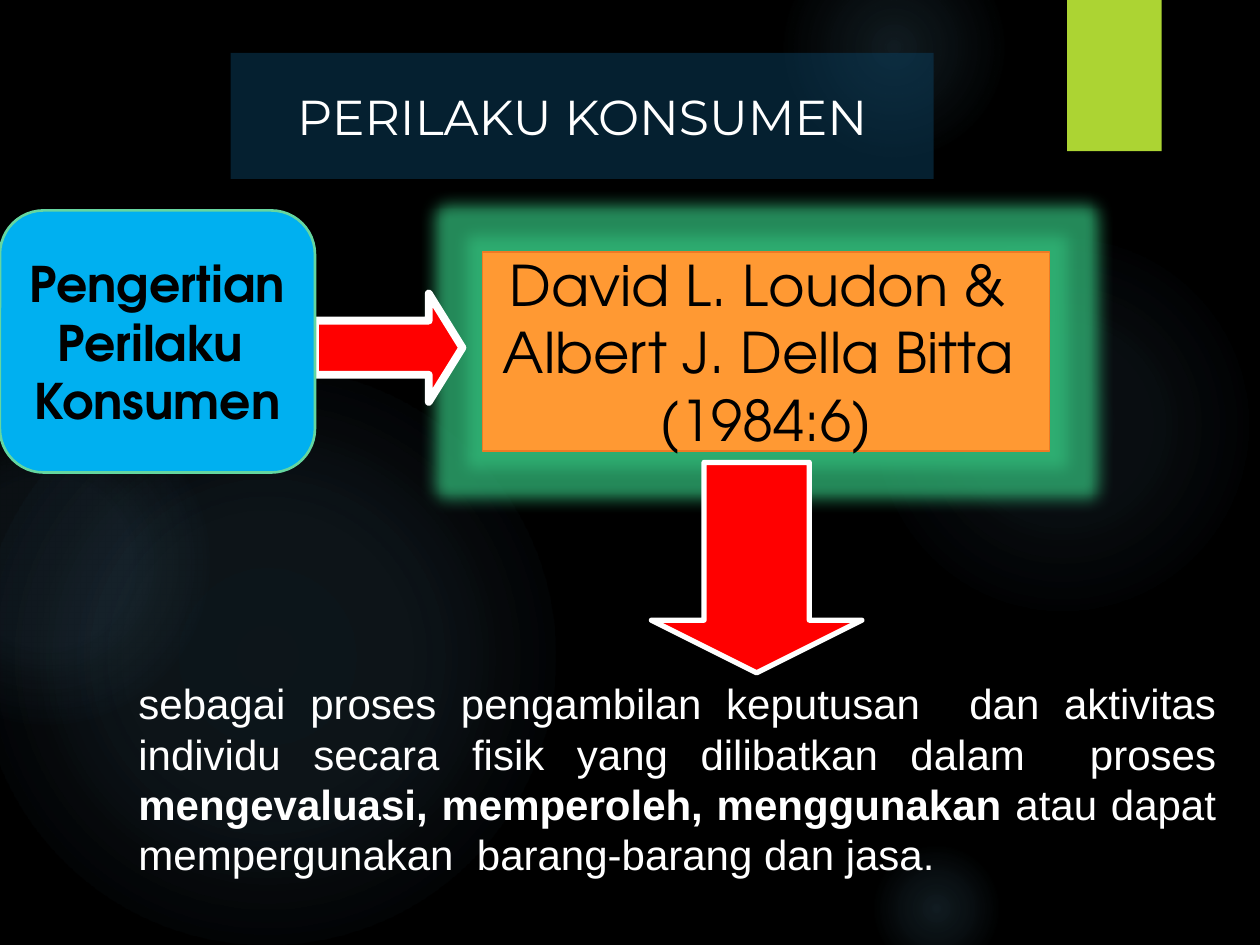
from lxml import etree
from pptx import Presentation
from pptx.dml.color import RGBColor
from pptx.enum.shapes import MSO_SHAPE
from pptx.enum.text import MSO_ANCHOR, PP_ALIGN
from pptx.oxml import parse_xml
from pptx.oxml.ns import nsdecls, qn
from pptx.util import Inches, Pt

RECT = MSO_SHAPE.RECTANGLE
ROUND = MSO_SHAPE.ROUNDED_RECTANGLE
ARROW = MSO_SHAPE.RIGHT_ARROW
OVAL = MSO_SHAPE.OVAL
MIDDLE = MSO_ANCHOR.MIDDLE
TOP = MSO_ANCHOR.TOP
CENTER = PP_ALIGN.CENTER
JUSTIFY = PP_ALIGN.JUSTIFY

COLORS = {
    "black": "000000", "white": "FFFFFF", "orb": "7AC4F0", "lime": "ACD433",
    "orange": "FF9933", "orange_line": "EF7A24", "glow": "31B878",
    "red": "FF0000", "blue": "00B0F0", "mint": "65D6A0", "navy": "0B4060",
}
HEADING_FONT = "TeX Gyre Adventor"

# left, top, diameter, then centre alpha, middle alpha and fade-out position
ORBS = [
    (6.89, 1.83, 3.08, 7, 6, 69),
    (6.22, -0.5, 1.75, 14, 7, 73),
    (6.89, 6.67, 1.08, 14, 7, 66),
    (-0.17, 2.92, 4.58, 11, 10, 75),
    (-0.92, 3.17, 2.58, 8, 8, 72),
]


def rgb(name):
    """Return the named colour."""
    return RGBColor.from_string(COLORS[name])


def place(sp, left, top, width, height):
    """Set position and size in inches."""
    sp.left, sp.top = Inches(left), Inches(top)
    sp.width, sp.height = Inches(width), Inches(height)


def add_box(s, kind, box, fill, line=None, line_width=0):
    """Add a flat preset shape."""
    sp = s.shapes.add_shape(kind, *map(Inches, box))
    sp.shadow.inherit = False
    sp.fill.solid()
    sp.fill.fore_color.rgb = rgb(fill)
    if line:
        sp.line.color.rgb = rgb(line)
        sp.line.width = Pt(line_width)
    else:
        sp.line.fill.background()
    return sp


def add_orb(s, left, top, size, center, middle, fade):
    """Add a soft circle that fades out from its centre."""
    sp = add_box(s, OVAL, (left, top, size, size), "orb")
    stops = "".join(
        f'<a:gs pos="{pos * 1000}"><a:srgbClr val="{COLORS["orb"]}">'
        f'<a:alpha val="{alpha * 1000}"/></a:srgbClr></a:gs>'
        for pos, alpha in ((0, center), (36, middle), (fade, 0)))
    grad = parse_xml(
        f'<a:gradFill {nsdecls("a")}><a:gsLst>{stops}</a:gsLst><a:path path="circle">'
        '<a:fillToRect l="50000" t="50000" r="50000" b="50000"/></a:path></a:gradFill>')
    solid = sp.element.spPr.find(qn("a:solidFill"))
    solid.getparent().replace(solid, grad)


def add_arrow(s, box, head, line_width, rotation=0):
    """Add a red block arrow with a white outline."""
    sp = add_box(s, ARROW, box, "red", "white", line_width)
    sp.adjustments[1] = head
    sp.rotation = rotation


def add_glow(sp, color, radius, alpha):
    """Add a coloured glow around a shape."""
    effects = sp.element.spPr.find(qn("a:effectLst"))
    glow = etree.SubElement(effects, qn("a:glow"), rad=str(Pt(radius)))
    clr = etree.SubElement(glow, qn("a:srgbClr"), val=COLORS[color])
    etree.SubElement(clr, qn("a:alpha"), val=str(alpha * 1000))


def write(sp, paragraphs, font, size, color, align=CENTER, anchor=MIDDLE, wrap=True):
    """Write paragraphs of (text, bold) runs into a shape."""
    tf = sp.text_frame
    tf.word_wrap = wrap
    tf.vertical_anchor = anchor
    for i, runs in enumerate(paragraphs):
        p = tf.add_paragraph() if i else tf.paragraphs[0]
        p.alignment = align
        p.line_spacing = 1.0
        p.space_before = Pt(0)
        for text, bold in runs:
            r = p.add_run()
            r.text = text
            r.font.name = font
            r.font.size = Pt(size)
            r.font.bold = bold
            r.font.color.rgb = rgb(color)


def add_title(s, text):
    """Format the title placeholder as a translucent band on top."""
    title = s.shapes.title
    place(title, 1.83, 0.42, 5.58, 1)
    title.fill.solid()
    title.fill.fore_color.rgb = rgb("navy")
    clr = title.element.spPr.find(".//" + qn("a:srgbClr"))
    etree.SubElement(clr, qn("a:alpha"), val="50000")
    write(title, [[(text, False)]], "Montserrat", 28, "white")
    title.element.getparent().append(title.element)


def main():
    """Build and save the slide."""
    prs = Presentation()
    prs.slide_width, prs.slide_height = Inches(10), Inches(7.5)
    s = prs.slides.add_slide(prs.slide_layouts[5])
    s.background.fill.solid()
    s.background.fill.fore_color.rgb = rgb("black")

    for orb in ORBS:
        add_orb(s, *orb)
    add_box(s, RECT, (8.47, 0, 0.75, 1.2), "lime")

    authors = add_box(s, RECT, (3.83, 2, 4.5, 1.58), "orange", "orange_line", 0.75)
    add_glow(authors, "glow", 18, 75)
    lines = ["David L. Loudon & ", "Albert J. Della Bitta ", "(1984:6)"]
    write(authors, [[(t, False)] for t in lines], HEADING_FONT, 32, "black", wrap=False)

    add_arrow(s, (2.5, 2.33, 1.17, 0.86), 0.31, 4.5)
    add_arrow(s, (5.17, 3.67, 1.67, 1.67), 0.25, 3, rotation=90)

    definition = s.shapes.add_textbox(*map(Inches, (1, 5.33, 8.75, 1.72)))
    write(definition, [[
        ("sebagai proses pengambilan keputusan  dan aktivitas individu secara fisik "
         "yang dilibatkan dalam  proses ", False),
        ("mengevaluasi, memperoleh, menggunakan", True),
        (" atau dapat mempergunakan  barang-barang dan jasa.", False),
    ]], "Arial", 24, "white", JUSTIFY, TOP)

    topic = add_box(s, ROUND, (0, 1.67, 2.5, 2.08), "blue", "mint", 1.5)
    lines = ["Pengertian", "Perilaku ", "Konsumen"]
    write(topic, [[(t, True)] for t in lines], HEADING_FONT, 28, "black")

    add_title(s, "PERILAKU KONSUMEN")
    prs.save("out.pptx")


if __name__ == "__main__":
    main()
